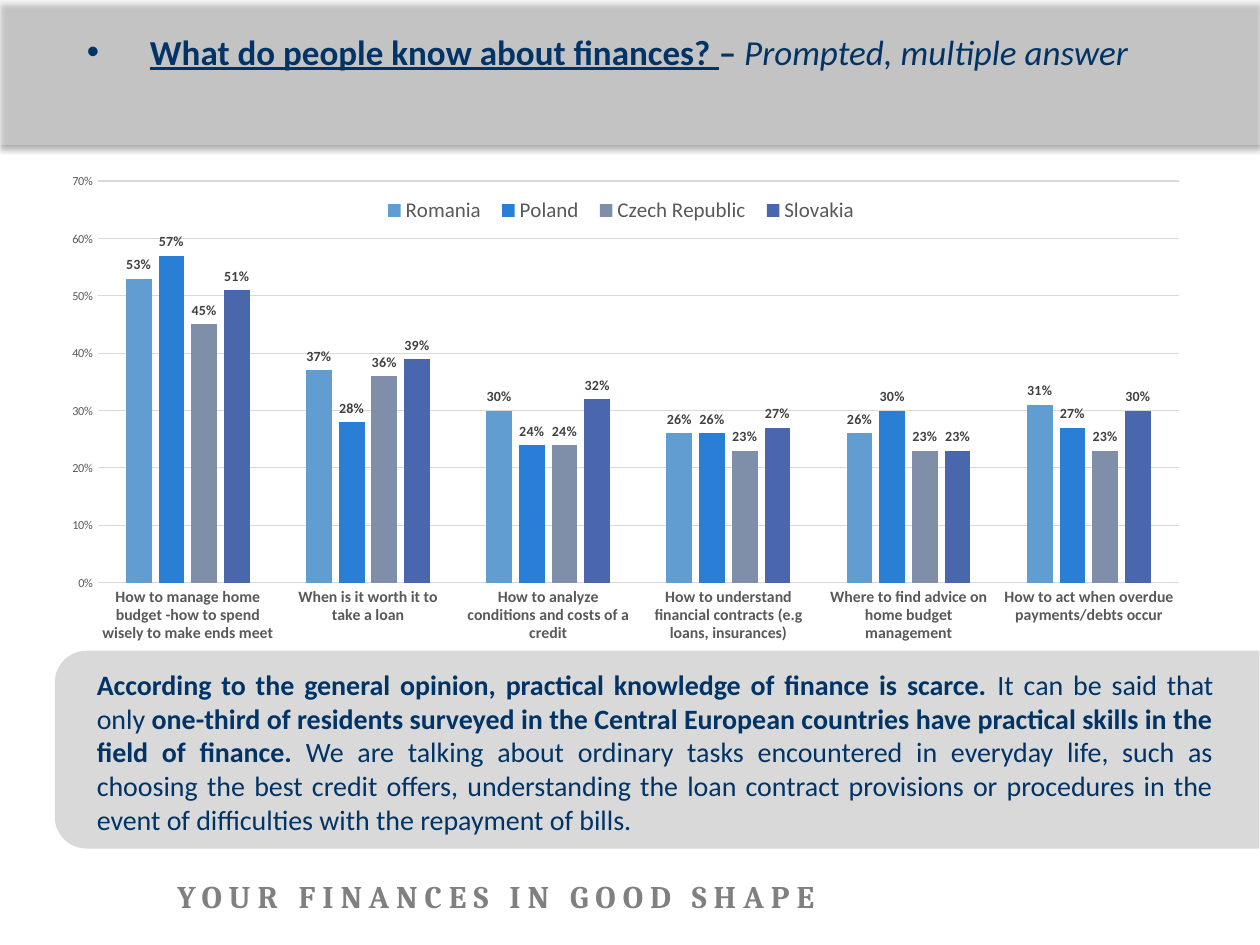
from lxml import etree
from pptx import Presentation
from pptx.chart.data import CategoryChartData
from pptx.dml.color import RGBColor
from pptx.enum import chart as charts, shapes, text
from pptx.oxml import ns, parse_xml
from pptx.util import Inches, Pt

# Content: each run is (text, bold, italic, underline)
TITLE = [
    ("What do people know about finances? ", True, False, True),
    ("– ", True, False, False),
    ("Prompted, multiple answer", False, True, False),
]
SUMMARY = [
    ("According to the general opinion, practical knowledge of finance is scarce. ", True, False, False),
    ("It can be said that only ", False, False, False),
    ("one-third of residents surveyed in the Central European countries have "
     "practical skills in the field of finance.", True, False, False),
    (" We are talking about ordinary tasks encountered in everyday life, such as "
     "choosing the best credit offers, understanding the loan contract provisions or "
     "procedures in the event of difficulties with the repayment of bills.", False, False, False),
]
SLOGAN = [("YOUR FINANCES IN GOOD SHAPE", True, False, False)]
CATEGORIES = [
    "How to manage home budget -how to spend wisely to make ends meet",
    "When is it worth it to take a loan",
    "How to analyze conditions and costs of a credit",
    "How to understand financial contracts (e.g loans, insurances)",
    "Where to find advice on home budget management",
    "How to act when overdue payments/debts occur",
]
COUNTRIES = [
    ("Romania", "629DD1", [0.53, 0.37, 0.30, 0.26, 0.26, 0.31]),
    ("Poland", "297FD5", [0.57, 0.28, 0.24, 0.26, 0.30, 0.27]),
    ("Czech Republic", "7F8FA9", [0.45, 0.36, 0.24, 0.23, 0.23, 0.23]),
    ("Slovakia", "4A66AC", [0.51, 0.39, 0.32, 0.27, 0.23, 0.30]),
]
NAVY, GRID, AXIS_TEXT = "003366", "D9D9D9", "595959"


def rgb(value):
    return RGBColor.from_string(value)


def box(*lengths):
    return [Inches(length) for length in lengths]


def set_font(font, size, color, bold=None, name="Calibri"):
    font.size, font.name, font.bold = Pt(size), name, bold
    font.color.rgb = rgb(color)


def write_runs(paragraph, runs):
    for words, bold, italic, underline in runs:
        run = paragraph.add_run()
        run.text = words
        run.font.bold, run.font.italic, run.font.underline = bold, italic, underline


def add_text(slide, lengths, runs):
    frame = slide.shapes.add_textbox(*box(*lengths)).text_frame
    frame.word_wrap = True
    write_runs(frame.paragraphs[0], runs)
    return frame.paragraphs[0]


def add_panel(slide, preset, lengths, color):
    shape = slide.shapes.add_shape(preset, *box(*lengths))
    shape.shadow.inherit = False
    shape.fill.solid()
    shape.fill.fore_color.rgb = rgb(color)
    shape.line.fill.background()
    return shape


def place(element, x, y, width, height, inner=False):
    """Give a chart part a manual layout, in fractions of the chart."""
    for old in element.findall(ns.qn("c:layout")):
        element.remove(old)
    target = '<c:layoutTarget val="inner"/>' if inner else ""
    layout = parse_xml(
        f'<c:layout {ns.nsdecls("c")}><c:manualLayout>{target}'
        '<c:xMode val="edge"/><c:yMode val="edge"/>'
        f'<c:x val="{x}"/><c:y val="{y}"/><c:w val="{width}"/><c:h val="{height}"/>'
        '</c:manualLayout></c:layout>')
    element.insert(0 if inner else 1, layout)


presentation = Presentation()
presentation.slide_width, presentation.slide_height = box(10, 7.5)
slide = presentation.slides.add_slide(presentation.slide_layouts[5])

# Translucent header band with a soft shadow
band = add_panel(slide, shapes.MSO_SHAPE.RECTANGLE, (0, 0, 10, 1.15), "F2F2F2")
fill_color = band.fill._xPr.find(ns.qn("a:solidFill"))[0]
etree.SubElement(fill_color, ns.qn("a:alpha"), val="32000")
effects = band._element.spPr.find(ns.qn("a:effectLst"))
effects.append(parse_xml(
    f'<a:outerShdw {ns.nsdecls("a")} blurRad="{Pt(3.5)}" dist="{Pt(2.2)}" dir="5400000" '
    'rotWithShape="0"><a:srgbClr val="000000"><a:alpha val="32000"/></a:srgbClr></a:outerShdw>'))
slide.shapes._spTree.insert(2, band._element)

# Slogan
slogan = add_text(slide, (1.31, 6.91, 7.24, 0.52), SLOGAN)
set_font(slogan.font, 18, "808080", True, "Cambria")
slogan.runs[0].font._element.set("spc", "400")

# Bulleted title
title = slide.shapes.title
title.left, title.top, title.width, title.height = box(0.59, 0.05, 9.29, 0.71)
title.text_frame.auto_size = text.MSO_AUTO_SIZE.NONE
title.text_frame.vertical_anchor = text.MSO_ANCHOR.MIDDLE
heading = title.text_frame.paragraphs[0]
heading.alignment = text.PP_ALIGN.LEFT
properties = heading._p.get_or_add_pPr()
properties.set("marL", str(Inches(0.5)))
properties.set("indent", str(Inches(-0.5)))
etree.SubElement(properties, ns.qn("a:buFont"), typeface="Arial")
etree.SubElement(properties, ns.qn("a:buChar"), char="•")
write_runs(heading, TITLE)
set_font(heading.font, 20, NAVY)

# Chart
data = CategoryChartData(number_format="0%")
data.categories = CATEGORIES
for country, _, values in COUNTRIES:
    data.add_series(country, values)
chart = slide.shapes.add_chart(
    charts.XL_CHART_TYPE.COLUMN_CLUSTERED, *box(0.41, 1.31, 9.13, 4.25), data).chart
set_font(chart.font, 7, "000000")
chart.has_title = False
plot = chart.plots[0]
plot.gap_width, plot.overlap, plot.vary_by_categories = 219, -27, False
for series, (_, color, _) in zip(plot.series, COUNTRIES):
    series.format.fill.solid()
    series.format.fill.fore_color.rgb = rgb(color)
    labels = series.data_labels
    labels.show_value = True
    labels.number_format, labels.number_format_is_linked = "0%", False
    labels.position = charts.XL_LABEL_POSITION.OUTSIDE_END
    set_font(labels.font, 8, "404040", True)

# Axes, grid and legend
category_axis, value_axis = chart.category_axis, chart.value_axis
for axis, size, bold in ((category_axis, 9, True), (value_axis, 7, False)):
    axis.major_tick_mark = axis.minor_tick_mark = charts.XL_TICK_MARK.NONE
    set_font(axis.tick_labels.font, size, AXIS_TEXT, bold)
value_axis.minimum_scale, value_axis.maximum_scale, value_axis.major_unit = 0, 0.7, 0.1
value_axis.tick_labels.number_format = "0%"
value_axis.tick_labels.number_format_is_linked = False
value_axis.format.line.fill.background()
for line in (category_axis.format.line, value_axis.major_gridlines.format.line):
    line.color.rgb, line.width = rgb(GRID), Pt(0.75)
chart.has_legend = True
chart.legend.position = charts.XL_LEGEND_POSITION.BOTTOM
chart.legend.include_in_layout = False
set_font(chart.legend.font, 12, AXIS_TEXT)
place(chart.legend._element, 0.28, 0.05, 0.43, 0.07)
place(chart._chartSpace.chart.plotArea, 0.04, 0.03, 0.94, 0.75, inner=True)

# Summary panel, turned so that its rounded corners are on the left
panel = add_panel(slide, shapes.MSO_SHAPE.ROUND_2_SAME_RECTANGLE, (4.43, 1.17, 1.57, 9.56), GRID)
panel.adjustments[0], panel.adjustments[1] = 0.16, 0
panel.rotation = 90
panel._element.spPr.xfrm.set("flipV", "1")
summary = add_text(slide, (0.67, 5.25, 9.06, 1.42), SUMMARY)
summary.alignment = text.PP_ALIGN.JUSTIFY
summary.space_after = Pt(6)
set_font(summary.font, 16, NAVY)

presentation.save("out.pptx")
